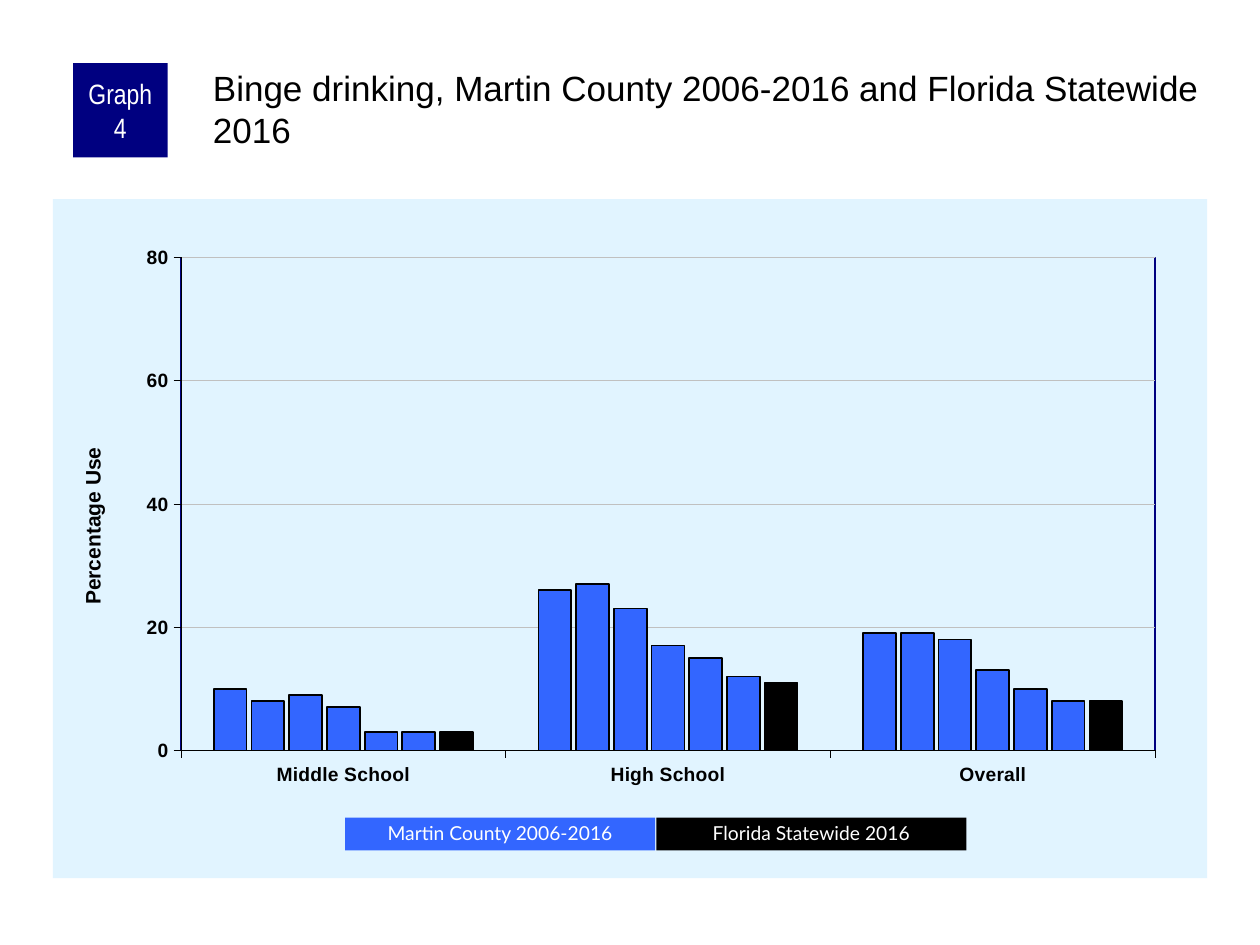
from lxml import etree
from pptx import Presentation
from pptx import util as u
from pptx.chart.data import CategoryChartData
from pptx.dml.color import RGBColor
from pptx.enum import chart as ch, shapes, text

DRAW = "http://schemas.openxmlformats.org/drawingml/2006/main"
PLOT = "http://schemas.openxmlformats.org/drawingml/2006/chart"
BLUE, NAVY, BLACK, WHITE = "3366FF", "000080", "000000", "FFFFFF"


def paint(part, shade):
    if hasattr(part, "solid"):
        part.solid()
        part.fore_color.rgb = RGBColor.from_string(shade)
    else:
        part.color.rgb = RGBColor.from_string(shade)


def node(body):
    return etree.fromstring(f'<c:{body[0]} xmlns:c="{PLOT}" xmlns:a="{DRAW}">{body[1]}</c:{body[0]}>')


deck = Presentation()
deck.slide_width, deck.slide_height = u.Inches(10), u.Inches(7.5)
slide = deck.slides.add_slide(deck.slide_layouts[5])

head = slide.shapes.title
head.left, head.top, head.width, head.height = map(u.Inches, (1.66, 0.5, 7.92, 0.83))
frame = head.text_frame
frame.text = "Binge drinking, Martin County 2006-2016 and Florida Statewide 2016"
frame.auto_size = text.MSO_AUTO_SIZE.NONE
frame.vertical_anchor = text.MSO_ANCHOR.TOP
frame.margin_left = frame.margin_top = u.Inches(0.03)
frame.margin_right = frame.margin_bottom = 0
line = frame.paragraphs[0]
line.alignment = text.PP_ALIGN.LEFT
line.font.name, line.font.size = "Arial", u.Pt(20)
paint(line.font, BLACK)

data = CategoryChartData()
data.categories = ["Middle School", "High School", "Overall"]
rows = [(10, 26, 19), (8, 27, 19), (9, 23, 18), (7, 17, 13), (3, 15, 10), (3, 12, 8), (3, 11, 8)]
for num, row in enumerate(rows, 1):
    data.add_series(f"Series {num}", row)
chart = slide.shapes.add_chart(
    ch.XL_CHART_TYPE.COLUMN_CLUSTERED, *map(u.Inches, (0.42, 1.58, 9.16, 5.39)), data
).chart
chart.has_legend = chart.has_title = False
chart.font.name, chart.font.size = "Arial", u.Pt(8)
paint(chart.font, BLACK)

plot = chart.plots[0]
plot.gap_width, plot.overlap, plot.vary_by_categories = 200, -15, False
for bar in plot.series:
    paint(bar.format.fill, BLUE)
    paint(bar.format.line, BLACK)
    bar.format.line.width = u.Pt(1)
paint(bar.format.fill, BLACK)

cat, val = chart.category_axis, chart.value_axis
for axis in (cat, val):
    axis.major_tick_mark = ch.XL_TICK_MARK.OUTSIDE
    font = axis.tick_labels.font
    font.name, font.size, font.bold = "Arial", u.Pt(11), True
    paint(font, BLACK)
    paint(axis.format.line, BLACK)
    axis.format.line.width = u.Pt(0.25)
val.minimum_scale, val.maximum_scale, val.major_unit = 0, 80, 20
val.has_major_gridlines = True
grid = val.major_gridlines.format.line
paint(grid, "C0C0C0")
grid.width = u.Pt(0.25)
val.axis_title.text_frame.text = "Percentage Use"
font = val.axis_title.text_frame.paragraphs[0].font
font.name, font.size, font.bold = "Arial", u.Pt(12), True
paint(font, BLACK)

area = chart.element.find(f".//{{{PLOT}}}plotArea")
label = area.find(f".//{{{PLOT}}}title")
places = [
    (area, 0, {"layoutTarget": "inner", "xMode": "edge", "yMode": "edge",
               "x": 0.111, "y": 0.086, "w": 0.844, "h": 0.726}),
    (label, 1, {"xMode": "edge", "yMode": "edge", "x": 0.02, "y": 0.36}),
]
for host, spot, rule in places:
    for old in host.findall(f"{{{PLOT}}}layout"):
        host.remove(old)
    tags = "".join(f'<c:{key} val="{num}"/>' for key, num in rule.items())
    host.insert(spot, node(("layout", f"<c:manualLayout>{tags}</c:manualLayout>")))
area.append(node(("spPr", '<a:noFill/><a:ln w="12700"><a:solidFill>'
                  f'<a:srgbClr val="{NAVY}"/></a:solidFill></a:ln>')))
area.getparent().addnext(node(("spPr", '<a:solidFill><a:srgbClr val="E1F4FF"/></a:solidFill>'
                               "<a:ln><a:noFill/></a:ln>")))

boxes = [
    ("Graph 4", (0.58, 0.5, 0.75, 0.75), NAVY, "Arial Narrow", 16, 1, (0.05, 0)),
    ("Martin County 2006-2016", (2.74, 6.49, 2.46, 0.26), BLUE, "Lato", 11, 0.9, (0.1, 0.05)),
    ("Florida Statewide 2016", (5.21, 6.49, 2.46, 0.26), BLACK, "Lato", 11, 0.9, (0.1, 0.05)),
]
for words, place, shade, face, size, space, pad in boxes:
    box = slide.shapes.add_shape(shapes.MSO_SHAPE.RECTANGLE, *map(u.Inches, place))
    box.shadow.inherit = False
    paint(box.fill, shade)
    box.line.fill.background()
    frame = box.text_frame
    frame.text = words
    frame.word_wrap = True
    frame.vertical_anchor = text.MSO_ANCHOR.MIDDLE
    frame.margin_left = frame.margin_right = u.Inches(pad[0])
    frame.margin_top = frame.margin_bottom = u.Inches(pad[1])
    line = frame.paragraphs[0]
    line.alignment, line.line_spacing = text.PP_ALIGN.CENTER, space
    line.font.name, line.font.size = face, u.Pt(size)
    paint(line.font, WHITE)

deck.save("out.pptx")
